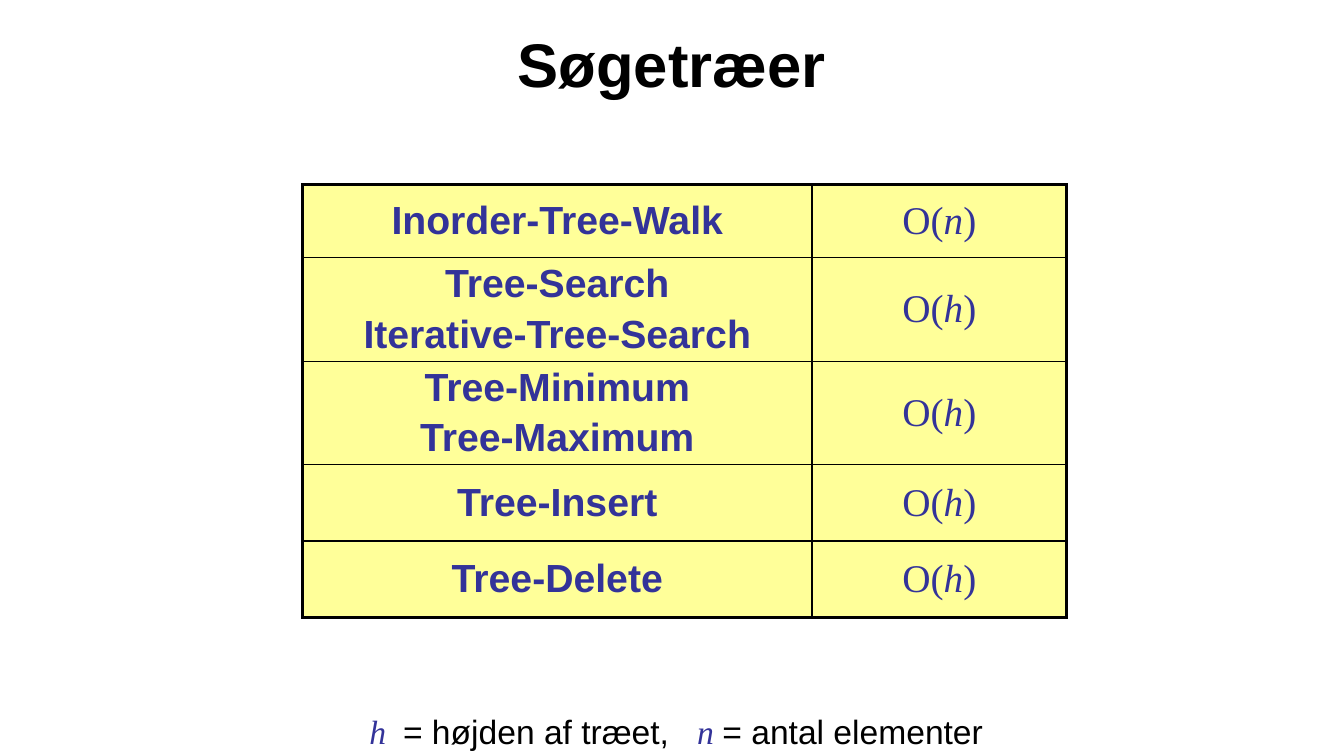
from lxml import etree
from pptx import Presentation
from pptx.dml.color import RGBColor
from pptx.enum.text import MSO_ANCHOR, PP_ALIGN
from pptx.oxml.ns import qn
from pptx.util import Pt

MIDDLE, TOP = MSO_ANCHOR.MIDDLE, MSO_ANCHOR.TOP
CENTER = PP_ALIGN.CENTER
SANS, SERIF = "Arial", "Times New Roman"
BLACK, BLUE, YELLOW = "000000", "333399", "FFFF99"
THIN, THICK = 1, 2.25

COLS = [364, 182]
# Operations, variable in the bound, row height
ROWS = [
    (["Inorder-Tree-Walk"], "n", 52),
    (["Tree-Search", "Iterative-Tree-Search"], "h", 74),
    (["Tree-Minimum", "Tree-Maximum"], "h", 74),
    (["Tree-Insert"], "h", 54.5),
    (["Tree-Delete"], "h", 54.5),
]


def paint(target, color):
    target.rgb = RGBColor.from_string(color)


def add_run(para, text, size, font, color, bold=False, italic=False):
    run = para.add_run()
    run.text = text
    style = run.font
    style.size, style.name = Pt(size), font
    style.bold, style.italic = bold, italic
    paint(style.color, color)


def add_text(slide, left, top, width, height, anchor, runs):
    box = slide.shapes.add_textbox(Pt(left), Pt(top), Pt(width), Pt(height))
    frame = box.text_frame
    frame.word_wrap = True
    frame.vertical_anchor = anchor
    para = frame.paragraphs[0]
    para.alignment = CENTER
    for run in runs:
        add_run(para, *run)


def set_edge(cell, side, width):
    props = cell._tc.get_or_add_tcPr()
    line = etree.SubElement(props, qn("a:ln" + side), w=str(Pt(width)))
    fill = etree.SubElement(line, qn("a:solidFill"))
    etree.SubElement(fill, qn("a:srgbClr"), val=BLACK)


def fill_cell(cell, lines, edges):
    cell.margin_top = cell.margin_bottom = 0
    cell.vertical_anchor = MIDDLE
    # Borders come before the fill in the cell properties
    for side, width in edges.items():
        set_edge(cell, side, width)
    cell.fill.solid()
    paint(cell.fill.fore_color, YELLOW)
    frame = cell.text_frame
    for i, runs in enumerate(lines):
        para = frame.add_paragraph() if i else frame.paragraphs[0]
        para.alignment = CENTER
        para.space_before = Pt(4.6)
        for text, font, bold, italic in runs:
            add_run(para, text, 28, font, BLUE, bold, italic)


def add_grid(slide, left, top):
    height = sum(row[2] for row in ROWS)
    shape = slide.shapes.add_table(len(ROWS), len(COLS), Pt(left), Pt(top),
                                   Pt(sum(COLS)), Pt(height))
    table = shape.table
    table.first_row = table.horz_banding = False
    for col, width in zip(table.columns, COLS):
        col.width = Pt(width)
    last = len(ROWS) - 1
    for r, (names, var, high) in enumerate(ROWS):
        table.rows[r].height = Pt(high)
        left_text = [[(name, SANS, True, False)] for name in names]
        bound = [[("O(", SERIF, False, False), (var, SERIF, False, True),
                  (")", SERIF, False, False)]]
        for c, lines in enumerate([left_text, bound]):
            # Thick frame outside, thin lines inside
            edges = {"L": THIN if c else THICK, "R": THICK if c else THIN,
                     "T": THIN if r else THICK,
                     "B": THICK if r == last else THIN}
            fill_cell(table.cell(r, c), lines, edges)


def main():
    deck = Presentation()
    deck.slide_width, deck.slide_height = Pt(960), Pt(540)
    slide = deck.slides.add_slide(deck.slide_layouts[6])

    # Title
    add_text(slide, 156, 0, 648, 90, MIDDLE,
             [("Søgetræer", 44, SANS, BLACK, True)])

    # Running times
    add_grid(slide, 216, 132)

    # Legend
    add_text(slide, 150, 504, 666, 36, TOP, [
        ("h  ", 24, SERIF, BLUE, False, True),
        ("= højden af træet,   ", 24, SANS, BLACK),
        ("n ", 24, SERIF, BLUE, False, True),
        ("= antal elementer", 24, SANS, BLACK),
    ])

    deck.save("out.pptx")


if __name__ == "__main__":
    main()
